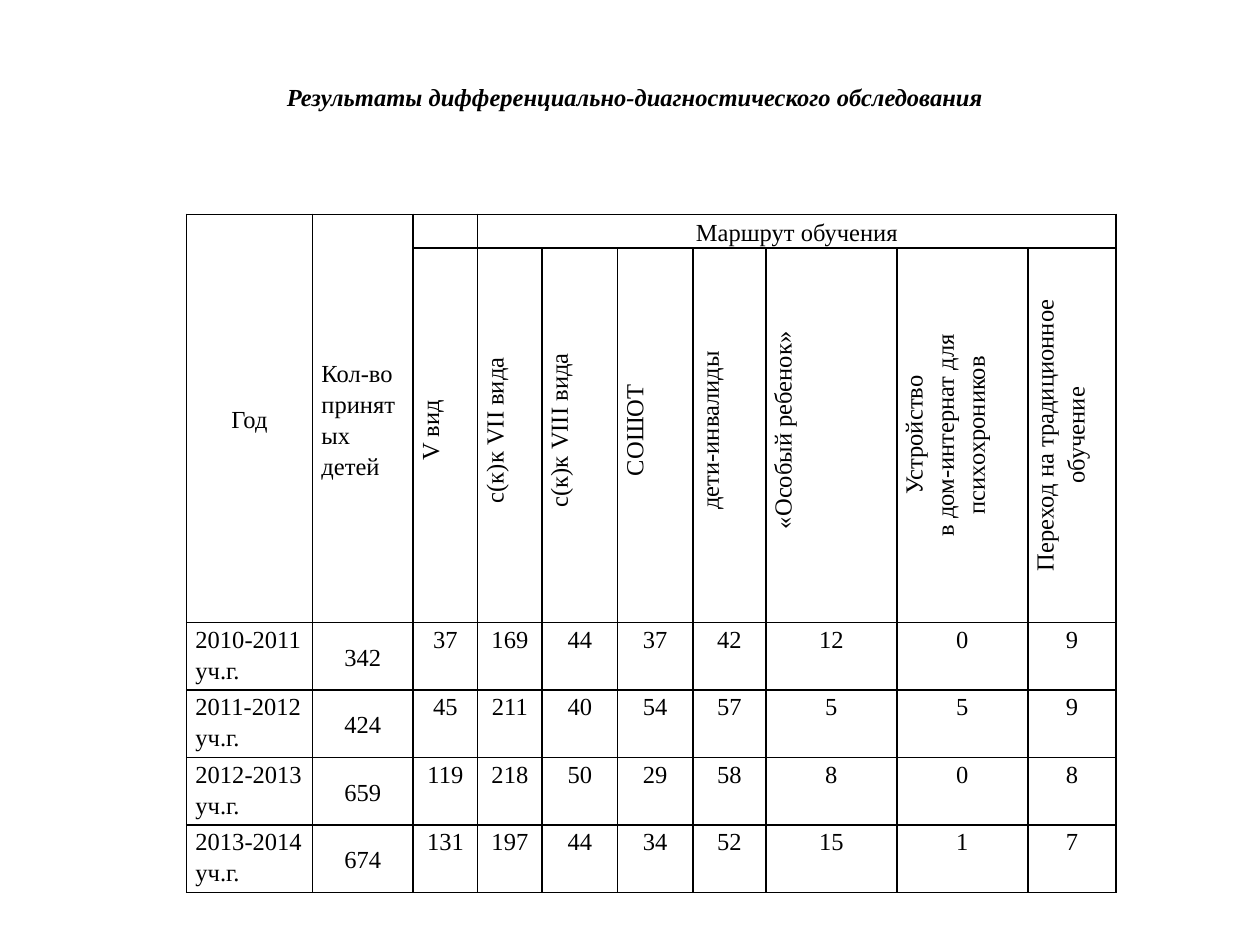
"""Build a slide with a table of diagnostic examination results by school year."""
from dataclasses import dataclass

import lxml.etree
import pptx
import pptx.dml.color
import pptx.enum.text
import pptx.oxml.ns
import pptx.util
from pptx.util import Cm

FONT = "Times New Roman"
FONT_SIZE = pptx.util.Pt(14)
BLACK = "000000"
ALIGN = pptx.enum.text.PP_ALIGN
ANCHOR = pptx.enum.text.MSO_ANCHOR
COLUMN_WIDTHS = [2.54, 2.03, 1.3, 1.3, 1.52, 1.52, 1.47, 2.64, 2.64, 1.78]
ROW_HEIGHTS = [0.68, 7.54, 1.36, 1.36, 1.36, 1.36]


@dataclass
class CellContent:
    lines: tuple[str, ...]
    align: ALIGN = ALIGN.CENTER
    anchor: ANCHOR = ANCHOR.TOP
    vertical: bool = False
    indent: float = 0


@dataclass
class YearResult:
    year: str
    admitted: int
    routes: tuple[int, ...]


ROUTES = [
    CellContent((name,), anchor=ANCHOR.MIDDLE, vertical=True, indent=0.2)
    for name in ("V вид", "с(к)к VII вида", "с(к)к VIII вида", "СОШОТ",
                 "дети-инвалиды", "«Особый ребенок»")
] + [
    CellContent(lines, anchor=ANCHOR.MIDDLE, vertical=True)
    for lines in (("Устройство", "в дом-интернат для психохроников"),
                  ("Переход на традиционное обучение",))
]
ROUTES[0].anchor = ANCHOR.TOP

RESULTS = [
    YearResult("2010-2011", 342, (37, 169, 44, 37, 42, 12, 0, 9)),
    YearResult("2011-2012", 424, (45, 211, 40, 54, 57, 5, 5, 9)),
    YearResult("2012-2013", 659, (119, 218, 50, 29, 58, 8, 0, 8)),
    YearResult("2013-2014", 674, (131, 197, 44, 34, 52, 15, 1, 7)),
]


def color(value: str) -> pptx.dml.color.RGBColor:
    return pptx.dml.color.RGBColor.from_string(value)


def add_run(paragraph, text: str, emphasis: bool = False) -> None:
    run = paragraph.add_run()
    run.text = text
    run.font.name = FONT
    run.font.size = FONT_SIZE
    run.font.bold = run.font.italic = emphasis
    run.font.color.rgb = color(BLACK)


def add_child(parent, tag: str, **attributes: str):
    return lxml.etree.SubElement(parent, pptx.oxml.ns.qn(tag), attributes)


def format_cell(cell) -> None:
    cell.margin_left = cell.margin_right = Cm(0.18)
    cell.margin_top = cell.margin_bottom = 0
    properties = cell._tc.get_or_add_tcPr()
    for side in ("L", "R", "T", "B"):
        line = add_child(properties, f"a:ln{side}", w=str(pptx.util.Pt(1)))
        add_child(add_child(line, "a:solidFill"), "a:srgbClr", val=BLACK)
    cell.fill.background()


def write_cell(cell, content: CellContent) -> None:
    cell.vertical_anchor = content.anchor
    if content.vertical:
        cell._tc.get_or_add_tcPr().set("vert", "vert270")
    for index, line in enumerate(content.lines):
        frame = cell.text_frame
        paragraph = frame.add_paragraph() if index else frame.paragraphs[0]
        paragraph.alignment = content.align
        paragraph.line_spacing = 1.15
        if content.indent:
            paragraph._p.get_or_add_pPr().set("marL", str(Cm(content.indent)))
        add_run(paragraph, line)


def add_title(slide) -> None:
    title = slide.shapes.title
    title.left, title.top, title.width, title.height = Cm(3.5), Cm(1.52), Cm(18.6), Cm(2.16)
    frame = title.text_frame
    frame.word_wrap = True
    frame.auto_size = pptx.enum.text.MSO_AUTO_SIZE.NONE
    frame.vertical_anchor = ANCHOR.TOP
    frame.paragraphs[0].alignment = ALIGN.CENTER
    add_run(frame.paragraphs[0], "Результаты дифференциально-диагностического обследования", True)


def add_results_table(slide) -> None:
    table = slide.shapes.add_table(
        len(ROW_HEIGHTS), len(COLUMN_WIDTHS), Cm(3.76), Cm(4.32),
        Cm(sum(COLUMN_WIDTHS)), Cm(sum(ROW_HEIGHTS))).table
    table.first_row = table.horz_banding = False
    for column, width in zip(table.columns, COLUMN_WIDTHS):
        column.width = Cm(width)
    for row, height in zip(table.rows, ROW_HEIGHTS):
        row.height = Cm(height)
    for cell in table.iter_cells():
        format_cell(cell)

    for column in (0, 1):
        table.cell(0, column).merge(table.cell(1, column))
    table.cell(0, 3).merge(table.cell(0, 9))
    write_cell(table.cell(0, 0), CellContent(("Год",), anchor=ANCHOR.MIDDLE))
    write_cell(table.cell(0, 1),
               CellContent(("Кол-во принятых", "детей"), ALIGN.JUSTIFY, ANCHOR.MIDDLE))
    write_cell(table.cell(0, 3), CellContent(("Маршрут обучения",), anchor=ANCHOR.MIDDLE))
    empty_paragraph = table.cell(0, 2).text_frame.paragraphs[0]
    add_child(empty_paragraph._p, "a:endParaRPr", sz=str(int(FONT_SIZE.pt * 100)))

    for column, route in enumerate(ROUTES, start=2):
        write_cell(table.cell(1, column), route)
    for row, result in enumerate(RESULTS, start=2):
        write_cell(table.cell(row, 0), CellContent((f"{result.year} уч.г.",), ALIGN.JUSTIFY))
        write_cell(table.cell(row, 1),
                   CellContent((str(result.admitted),), anchor=ANCHOR.MIDDLE))
        for column, count in enumerate(result.routes, start=2):
            write_cell(table.cell(row, column), CellContent((str(count),)))


def main() -> None:
    presentation = pptx.Presentation()
    presentation.slide_width, presentation.slide_height = Cm(25.4), Cm(19.05)
    slide = presentation.slides.add_slide(presentation.slide_layouts[5])
    add_title(slide)
    add_results_table(slide)
    presentation.save("out.pptx")


if __name__ == "__main__":
    main()
